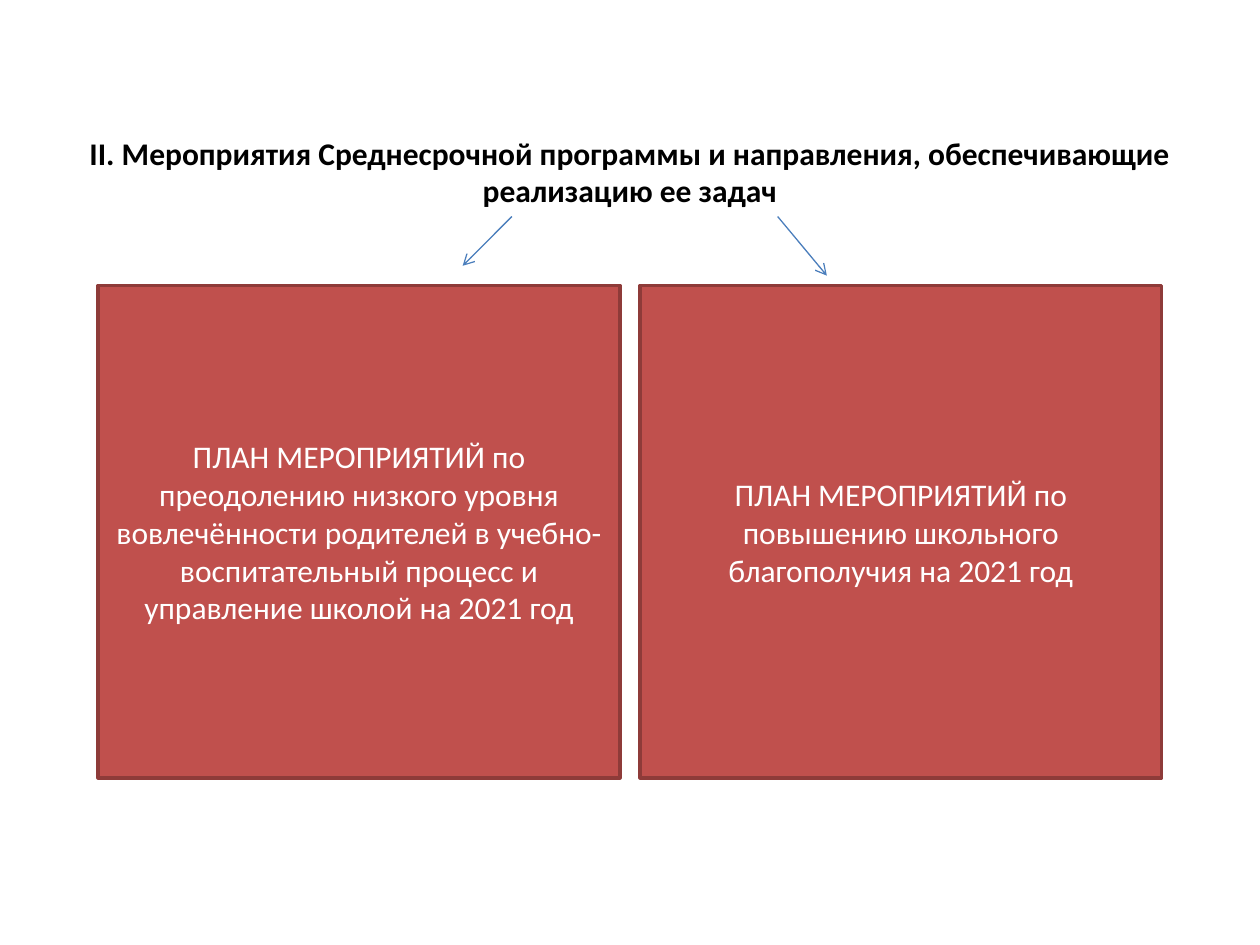
from dataclasses import dataclass

from lxml.etree import SubElement
from pptx import Presentation
from pptx.dml.color import RGBColor as RGB
from pptx.enum.shapes import MSO_CONNECTOR as CONNECTOR, MSO_SHAPE as SHAPE
from pptx.enum.text import MSO_ANCHOR as ANCHOR, PP_ALIGN as ALIGN
from pptx.oxml.ns import qn
from pptx.util import Pt

# Content
TITLE = ("II. Мероприятия Среднесрочной программы и направления, "
         "обеспечивающие реализацию ее задач")
PLANS = [
    "ПЛАН МЕРОПРИЯТИЙ по преодолению низкого уровня вовлечённости родителей "
    "в учебно-воспитательный процесс и управление школой на 2021 год",
    "ПЛАН МЕРОПРИЯТИЙ по повышению школьного благополучия на 2021 год",
]
ARROWS = [((292.5, 123.75), (264.4, 151.9)),
          ((444.4, 123.75), (472.5, 157.5))]


@dataclass(frozen=True)
class Theme:
    font: str = "Calibri"
    size: float = 18
    text: RGB = RGB(0, 0, 0)
    card: RGB = RGB(0xC0, 0x50, 0x4D)
    border: RGB = RGB(0x8E, 0x3B, 0x39)
    card_text: RGB = RGB(255, 255, 255)
    arrow: RGB = RGB(0x4B, 0x7E, 0xBC)


T = Theme()

# Layout in points
WIDTH, HEIGHT = 720, 540
TITLE_BOX = (36, 76, 648, 44)
CARD_TOP, CARD_W, CARD_H, GAP = 163.2, 298.1, 281.3, 11.5
CARD_LEFT = (WIDTH - len(PLANS) * CARD_W - (len(PLANS) - 1) * GAP) / 2


def write(sp, text, color, bold=False):
    tf = sp.text_frame
    tf.word_wrap = True
    tf.vertical_anchor = ANCHOR.MIDDLE
    tf.text = text
    p = tf.paragraphs[0]
    p.alignment = ALIGN.CENTER
    font = p.runs[0].font
    font.name, font.size, font.bold = T.font, Pt(T.size), bold
    font.color.rgb = color


def add_card(s, left, text):
    sp = s.shapes.add_shape(SHAPE.RECTANGLE, Pt(left), Pt(CARD_TOP),
                            Pt(CARD_W), Pt(CARD_H))
    sp.shadow.inherit = False
    sp.fill.solid()
    sp.fill.fore_color.rgb = T.card
    sp.line.color.rgb = T.border
    sp.line.width = Pt(2)
    write(sp, text, T.card_text)


def add_arrow(s, start, end):
    c = s.shapes.add_connector(CONNECTOR.STRAIGHT,
                               *(Pt(v) for v in start + end))
    c.line.color.rgb = T.arrow
    c.line.width = Pt(0.75)
    SubElement(c.line._get_or_add_ln(), qn("a:tailEnd"), type="arrow")
    SubElement(c._element.spPr, qn("a:effectLst"))


def main():
    prs = Presentation()
    prs.slide_width, prs.slide_height = Pt(WIDTH), Pt(HEIGHT)
    s = prs.slides.add_slide(prs.slide_layouts[6])

    # Title
    write(s.shapes.add_textbox(*(Pt(v) for v in TITLE_BOX)),
          TITLE, T.text, bold=True)

    # Plan cards
    for i, plan in enumerate(PLANS):
        add_card(s, CARD_LEFT + i * (CARD_W + GAP), plan)

    # Arrows from the title to the cards
    for start, end in ARROWS:
        add_arrow(s, start, end)

    prs.save("out.pptx")


if __name__ == "__main__":
    main()
